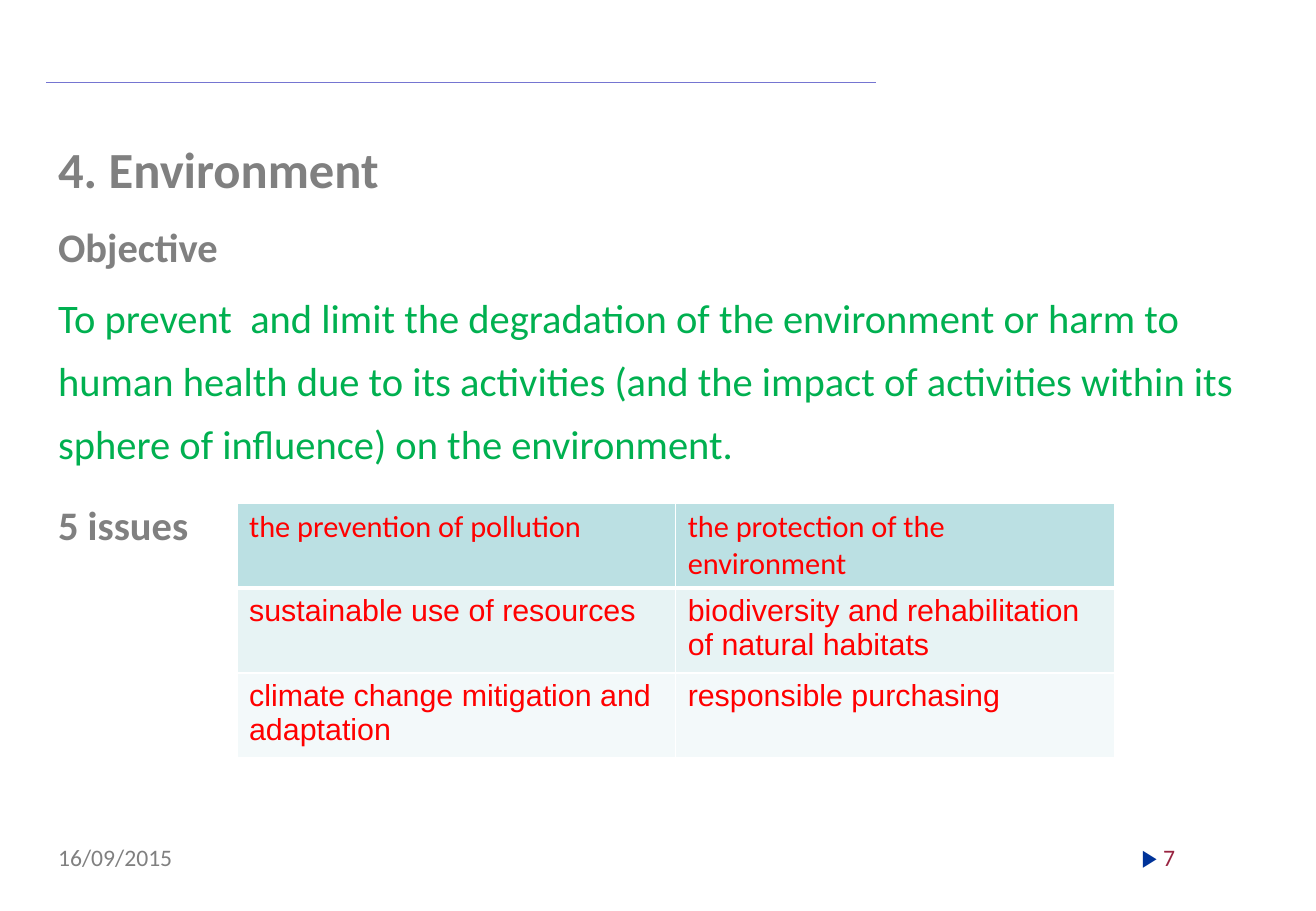
from lxml import etree
from pptx import Presentation
from pptx.dml.color import RGBColor
from pptx.enum.shapes import MSO_CONNECTOR
from pptx.enum.text import PP_ALIGN
from pptx.oxml.ns import qn
from pptx.util import Inches, Pt

STRAIGHT = MSO_CONNECTOR.STRAIGHT
RIGHT = PP_ALIGN.RIGHT
COLORS = {
    "rule": "7575D1",
    "gray": "808080",
    "green": "00B050",
    "red": "FF0000",
    "marker": "003399",
    "number": "992441",
    "border": "FFFFFF",
    "header": "BBE0E3",
    "band": "E7F3F4",
    "pale": "F3F9FA",
}


def add_text(paragraph, text, size=14, color="gray", font="Calibri", bold=False):
    run = paragraph.add_run()
    run.text = text
    run.font.size = Pt(size)
    run.font.name = font
    run.font.bold = bold
    run.font.color.rgb = RGBColor.from_string(COLORS[color])


def set_borders(cell, bottom):
    properties = cell._tc.get_or_add_tcPr()
    widths = {"a:lnL": 1, "a:lnR": 1, "a:lnT": 1, "a:lnB": bottom}
    for position, (tag, width) in enumerate(widths.items()):
        line = etree.Element(qn(tag), w=str(Pt(width)))
        fill = etree.SubElement(line, qn("a:solidFill"))
        etree.SubElement(fill, qn("a:srgbClr"), val=COLORS["border"])
        properties.insert(position, line)


class SlideBuilder:
    def __init__(self, slide):
        self.slide = slide

    def rule(self, left, right, top):
        line = self.slide.shapes.add_connector(
            STRAIGHT, Inches(left), Inches(top), Inches(right), Inches(top))
        line.line.color.rgb = RGBColor.from_string(COLORS["rule"])
        line.line.width = Pt(0.75)
        etree.SubElement(line._element.spPr, qn("a:effectLst"))

    def text_box(self, left, top, width, height):
        shape = self.slide.shapes.add_textbox(
            Inches(left), Inches(top), Inches(width), Inches(height))
        shape.text_frame.word_wrap = True
        return shape.text_frame

    def body(self, left, top, width, height, items):
        frame = self.text_box(left, top, width, height)
        for index, (text, spacing, style) in enumerate(items):
            paragraph = frame.add_paragraph() if index else frame.paragraphs[0]
            paragraph.line_spacing = spacing
            if index:
                paragraph.space_before = Pt(4.8)
            add_text(paragraph, text, **style)

    def footer(self, left, width, runs, align=None):
        paragraph = self.text_box(left, 6.89, width, 0.4).paragraphs[0]
        paragraph.alignment = align
        for text, style in runs:
            add_text(paragraph, text, **style)

    def table(self, left, top, width, heights, rows):
        columns = len(rows[0][0])
        table = self.slide.shapes.add_table(
            len(rows), columns, Inches(left), Inches(top),
            Inches(width), Inches(sum(heights))).table
        for column in table.columns:
            column.width = Inches(width / columns)
        for index, (texts, fill, font) in enumerate(rows):
            table.rows[index].height = Inches(heights[index])
            for column, text in enumerate(texts):
                cell = table.cell(index, column)
                cell.fill.solid()
                cell.fill.fore_color.rgb = RGBColor.from_string(COLORS[fill])
                set_borders(cell, bottom=1 if index else 3)
                add_text(cell.text_frame.paragraphs[0], text,
                         size=18, color="red", font=font)


def main():
    presentation = Presentation()
    presentation.slide_width = Inches(10.83)
    presentation.slide_height = Inches(7.5)
    builder = SlideBuilder(presentation.slides.add_slide(presentation.slide_layouts[6]))

    builder.rule(0.38, 7.21, 0.68)
    heading = {"size": 24, "bold": True}
    builder.body(0.38, 0.84, 10.07, 5.59, [
        ("4. Environment", 1.5, {"size": 30, "bold": True}),
        ("Objective", 1.3, heading),
        ("To prevent  and limit the degradation of the environment or harm to "
         "human health due to its activities (and the impact of activities within "
         "its sphere of influence) on the environment.",
         1.3, {"size": 24, "color": "green"}),
        ("5 issues", 1.5, heading),
    ])
    builder.footer(0.38, 1.35, [("16/09/2015", {})])
    builder.footer(9, 0.77, [
        ("▶ ", {"color": "marker", "font": "Times New Roman"}),
        ("7", {"color": "number"}),
    ], align=RIGHT)
    builder.table(1.95, 4.14, 7.22, [0.7, 0.65, 0.68], [
        (["the prevention of pollution", "the protection of the environment"],
         "header", "Calibri"),
        (["sustainable use of resources",
          "biodiversity and rehabilitation of natural habitats"], "band", "Arial"),
        (["climate change mitigation and adaptation", "responsible purchasing"],
         "pale", "Arial"),
    ])
    presentation.save("out.pptx")


if __name__ == "__main__":
    main()
